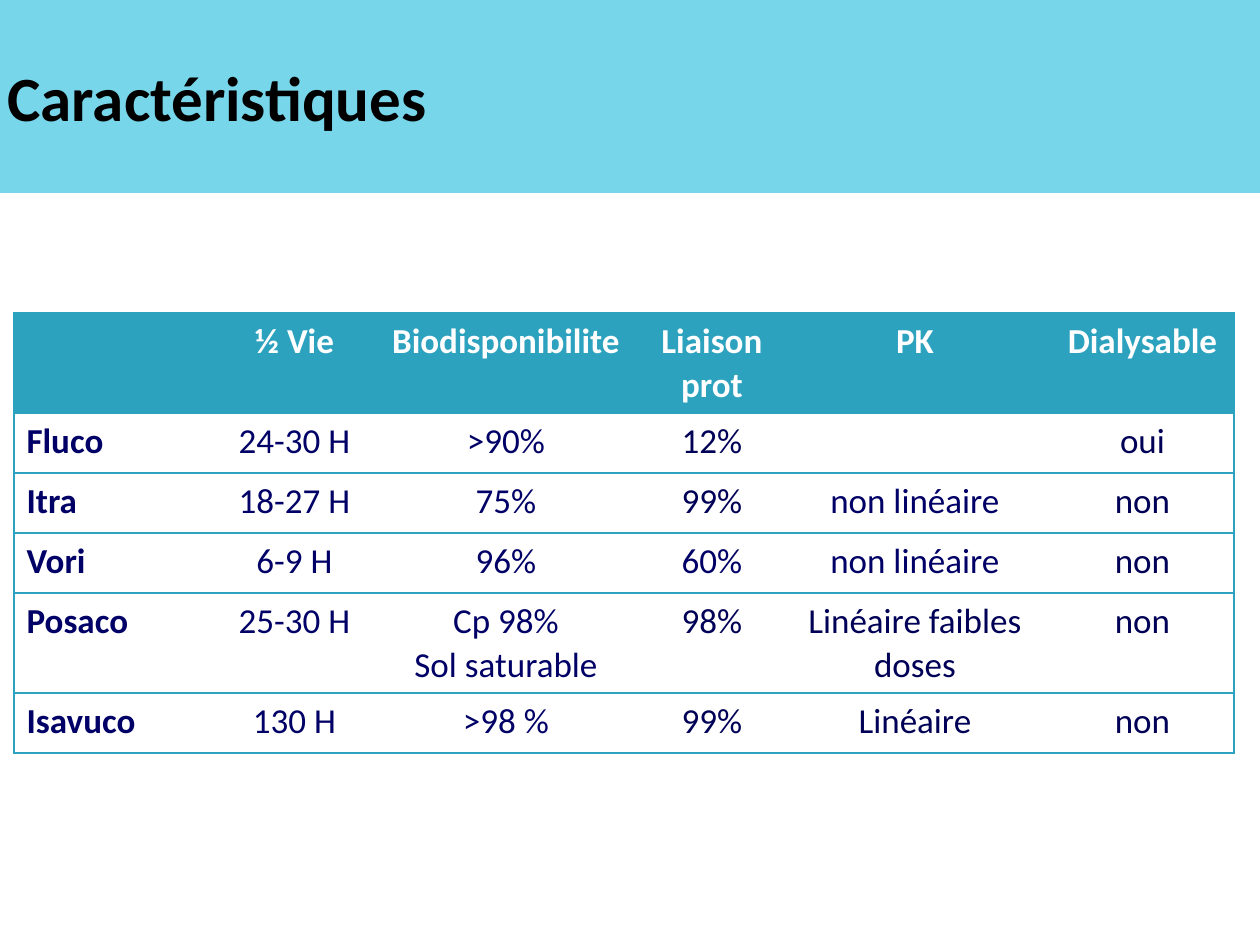
from lxml import etree
from pptx import Presentation
from pptx import util as u
from pptx.dml.color import RGBColor
from pptx.enum import text
from pptx.oxml import ns

FONT = "Calibri"
TEAL, PALE_TEAL = "2DA2BF", "78D6EA"
WHITE, BLACK = "FFFFFF", "000000"
NAVY, DARK_NAVY = "000066", "000056"
PLAIN_TABLE_STYLE = "{2D5ABB26-0587-4C30-8999-92F81FD0307C}"

COLUMN_WIDTHS = [208, 145, 278, 134, 272, 183]
ROW_HEIGHTS = [100, 60, 60, 60, 100, 60]
ROWS = [
    ["", "½ Vie", "Biodisponibilite", "Liaison\nprot", "PK", "Dialysable"],
    ["Fluco", "24-30 H", ">90%", "12%", "", "oui"],
    ["Itra", "18-27 H", "75%", "99%", "non linéaire", "non"],
    ["Vori", "6-9 H", "96%", "60%", "non linéaire", "non"],
    ["Posaco", "25-30 H", "Cp 98%\nSol saturable", "98%", "Linéaire faibles doses", "non"],
    ["Isavuco", "130 H", ">98 %", "99%", "Linéaire", "non"],
]
NAVY_EXCEPTIONS = {(2, 4), (3, 3), (3, 4)}


def px(length):
    return u.Emu(round(length * 914400 / 126))


def rgb(value):
    return RGBColor.from_string(value)


def write(frame, content, size=20, color=NAVY, bold=False,
          align=text.PP_ALIGN.CENTER, spacing=1.02):
    """Fill a text frame, one paragraph per line of content."""
    for number, line in enumerate(content.split("\n")):
        para = frame.add_paragraph() if number else frame.paragraphs[0]
        para.alignment = align
        para.line_spacing = spacing
        para.font.size = u.Pt(size)
        if line:
            span = para.add_run()
            span.text = line
            span.font.name = FONT
            span.font.size = u.Pt(size)
            span.font.bold = bold
            span.font.color.rgb = rgb(color)


def set_borders(cell, sides):
    """Draw the sides named by the letters L, R, T and B."""
    properties = cell._tc.get_or_add_tcPr()
    for position, side in enumerate(sides):
        line = etree.Element(ns.qn(f"a:ln{side}"), w=str(u.Pt(0.75)))
        fill = etree.SubElement(line, ns.qn("a:solidFill"))
        etree.SubElement(fill, ns.qn("a:srgbClr"), val=TEAL)
        properties.insert(position, line)


def add_title_band(page, left, top, width, height):
    title = page.shapes.title
    title.left, title.top, title.width, title.height = map(px, (left, top, width, height))
    title.fill.solid()
    title.fill.fore_color.rgb = rgb(PALE_TEAL)
    frame = title.text_frame
    frame.auto_size = text.MSO_AUTO_SIZE.NONE
    frame.vertical_anchor = text.MSO_ANCHOR.MIDDLE
    write(frame, "Caractéristiques", size=36, color=BLACK, bold=True,
          align=text.PP_ALIGN.LEFT, spacing=1)


def text_color(row, column):
    if row == 0:
        return WHITE
    if column < 3 or (row, column) in NAVY_EXCEPTIONS:
        return NAVY
    return DARK_NAVY


def add_drug_table(page, left, top):
    last = len(COLUMN_WIDTHS) - 1
    table = page.shapes.add_table(
        len(ROWS), len(COLUMN_WIDTHS), px(left), px(top),
        px(sum(COLUMN_WIDTHS)), px(sum(ROW_HEIGHTS))).table
    table.horz_banding = False
    table._tbl.tblPr.find(ns.qn("a:tableStyleId")).text = PLAIN_TABLE_STYLE
    for column, width in zip(table.columns, COLUMN_WIDTHS):
        column.width = px(width)
    for row, height in zip(table.rows, ROW_HEIGHTS):
        row.height = px(height)

    for r, values in enumerate(ROWS):
        for c, value in enumerate(values):
            cell = table.cell(r, c)
            if r == 0:
                cell.fill.solid()
                cell.fill.fore_color.rgb = rgb(TEAL)
            else:
                cell.fill.background()
            set_borders(cell, ("L" if c == 0 else "") + ("R" if c == last else "") + "TB")
            write(cell.text_frame, value, color=text_color(r, c),
                  bold=r == 0 or c == 0,
                  align=text.PP_ALIGN.CENTER if c else text.PP_ALIGN.LEFT)


def main():
    deck = Presentation()
    deck.slide_width, deck.slide_height = px(1260), px(945)
    page = deck.slides.add_slide(deck.slide_layouts[5])
    add_title_band(page, -5, 0, 1265, 193)
    add_drug_table(page, 14, 313)
    deck.save("out.pptx")


if __name__ == "__main__":
    main()
